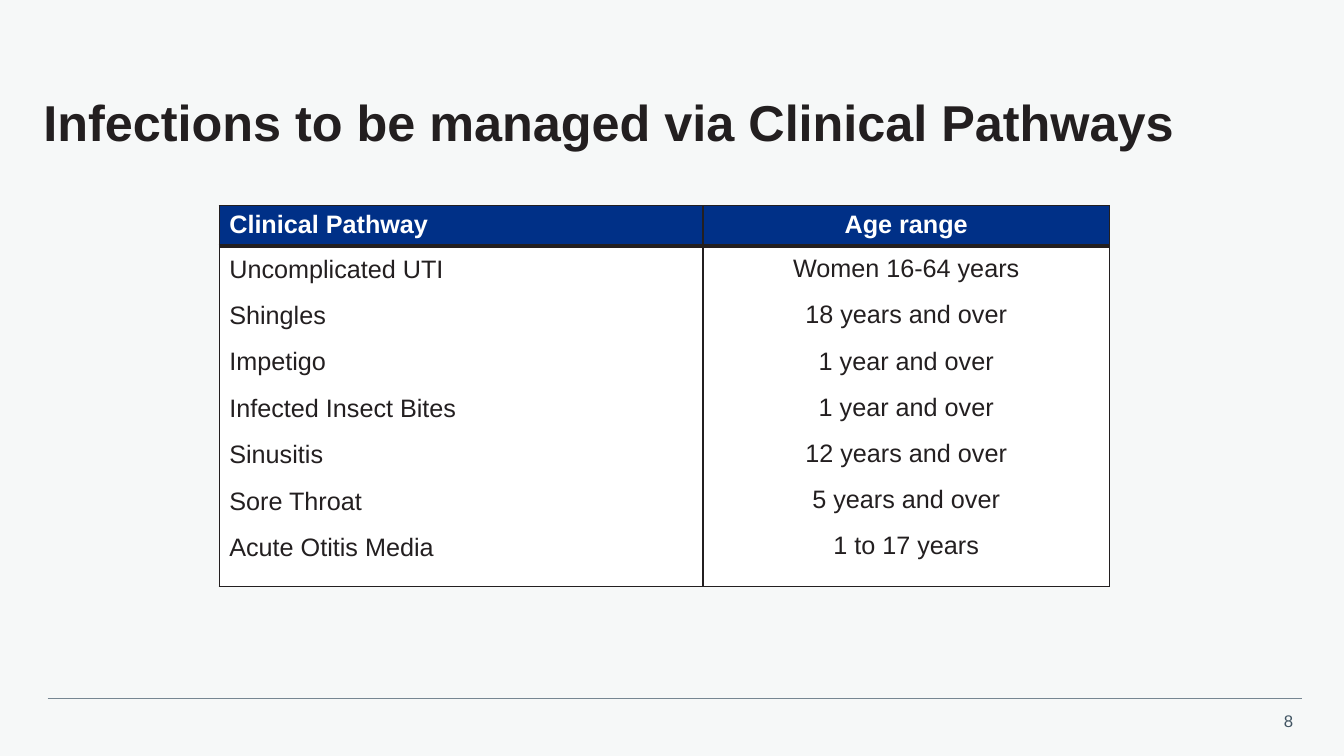
from typing import NamedTuple

from lxml.etree import SubElement
from pptx import Presentation
from pptx.dml.color import RGBColor
from pptx.enum.shapes import MSO_CONNECTOR as Connector, MSO_SHAPE as Preset
from pptx.enum.text import MSO_ANCHOR as Anchor, PP_ALIGN as Align
from pptx.oxml.ns import qn
from pptx.util import Pt

COLORS = {
    "background": "F6F8F8",
    "ink": "231F20",
    "header": "003087",
    "white": "FFFFFF",
    "rule": "768692",
    "number": "425563",
}
FONT = "Arial"
SLIDE_SIZE = (960, 540)
THIN, THICK = 1, 3
HEADER_HEIGHT, BODY_HEIGHT = 26, 243.5


class Column(NamedTuple):
    heading: str
    entries: list[str]
    width: float
    align: Align
    line_spacing: float


class Label(NamedTuple):
    text: str
    box: tuple[float, float, float, float]
    size: float
    color: str
    bold: bool
    align: Align
    anchor: Anchor
    margins: tuple[float, float]
    line_spacing: float
    wrap: bool


COLUMNS = [
    Column("Clinical Pathway",
           ["Uncomplicated UTI", "Shingles", "Impetigo", "Infected Insect Bites",
            "Sinusitis", "Sore Throat", "Acute Otitis Media"],
           345.6, Align.LEFT, 1.15),
    Column("Age range",
           ["Women 16-64 years", "18 years and over", "1 year and over",
            "1 year and over", "12 years and over", "5 years and over",
            "1 to 17 years"],
           290.2, Align.CENTER, 1.14),
]

LABELS = [
    Label("8", (901.4, 504, 29.5, 21.6), 12, "number", False,
          Align.RIGHT, Anchor.TOP, (7.2, 3.6), 1, False),
    Label("Infections to be managed via Clinical Pathways",
          (31, 55.4, 897.8, 68.4), 36, "ink", True,
          Align.LEFT, Anchor.MIDDLE, (0, 0), 0.9, True),
]


def rgb(name: str) -> RGBColor:
    return RGBColor.from_string(COLORS[name])


def add_run(paragraph, text: str, size: float, color: str, bold: bool) -> None:
    run = paragraph.add_run()
    run.text = text
    run.font.name = FONT
    run.font.size = Pt(size)
    run.font.bold = bold
    run.font.color.rgb = rgb(color)


def add_label(slide, label: Label) -> None:
    frame = slide.shapes.add_textbox(*map(Pt, label.box)).text_frame
    frame.word_wrap = label.wrap
    frame.vertical_anchor = label.anchor
    side, end = map(Pt, label.margins)
    frame.margin_left = frame.margin_right = side
    frame.margin_top = frame.margin_bottom = end
    paragraph = frame.paragraphs[0]
    paragraph.alignment = label.align
    paragraph.line_spacing = label.line_spacing
    add_run(paragraph, label.text, label.size, label.color, label.bold)


def add_background(slide) -> None:
    panel = slide.shapes.add_shape(Preset.RECTANGLE, 0, 0, *map(Pt, SLIDE_SIZE))
    panel.shadow.inherit = False
    panel.fill.solid()
    panel.fill.fore_color.rgb = rgb("background")
    panel.line.fill.background()


def add_footer_rule(slide) -> None:
    rule = slide.shapes.add_connector(
        Connector.STRAIGHT, Pt(34), Pt(499), Pt(929.7), Pt(499))
    rule.line.color.rgb = rgb("rule")
    rule.line.width = Pt(0.5)
    SubElement(rule._element.spPr, qn("a:effectLst"))


def style_cell(cell, fill: str, top: float, bottom: float) -> None:
    """Set the borders, then the fill, in the order the schema asks for."""
    properties = cell._tc.get_or_add_tcPr()
    widths = {"a:lnL": THIN, "a:lnR": THIN, "a:lnT": top, "a:lnB": bottom}
    for tag, width in widths.items():
        border = SubElement(properties, qn(tag), w=str(Pt(width)))
        solid = SubElement(border, qn("a:solidFill"))
        SubElement(solid, qn("a:srgbClr"), val=COLORS["ink"])
    cell.fill.solid()
    cell.fill.fore_color.rgb = rgb(fill)


def add_pathway_table(slide) -> None:
    width = sum(column.width for column in COLUMNS)
    table = slide.shapes.add_table(
        2, len(COLUMNS), Pt(156.6), Pt(146.9),
        Pt(width), Pt(HEADER_HEIGHT + BODY_HEIGHT)).table
    table.horz_banding = False
    table.rows[0].height = Pt(HEADER_HEIGHT)
    table.rows[1].height = Pt(BODY_HEIGHT)

    for index, column in enumerate(COLUMNS):
        table.columns[index].width = Pt(column.width)
        header, body = table.cell(0, index), table.cell(1, index)
        style_cell(header, "header", THIN, THICK)
        style_cell(body, "white", THICK, THIN)

        heading = header.text_frame.paragraphs[0]
        heading.alignment = column.align
        add_run(heading, column.heading, 18, "white", True)

        frame = body.text_frame
        for position, entry in enumerate(column.entries):
            paragraph = frame.add_paragraph() if position else frame.paragraphs[0]
            paragraph.alignment = column.align
            paragraph.line_spacing = column.line_spacing
            paragraph.space_after = Pt(10)
            add_run(paragraph, entry, 18, "ink", False)


def main() -> None:
    presentation = Presentation()
    presentation.slide_width, presentation.slide_height = map(Pt, SLIDE_SIZE)
    slide = presentation.slides.add_slide(presentation.slide_layouts[6])
    add_background(slide)
    add_footer_rule(slide)
    for label in LABELS:
        add_label(slide, label)
    add_pathway_table(slide)
    presentation.save("out.pptx")


if __name__ == "__main__":
    main()
